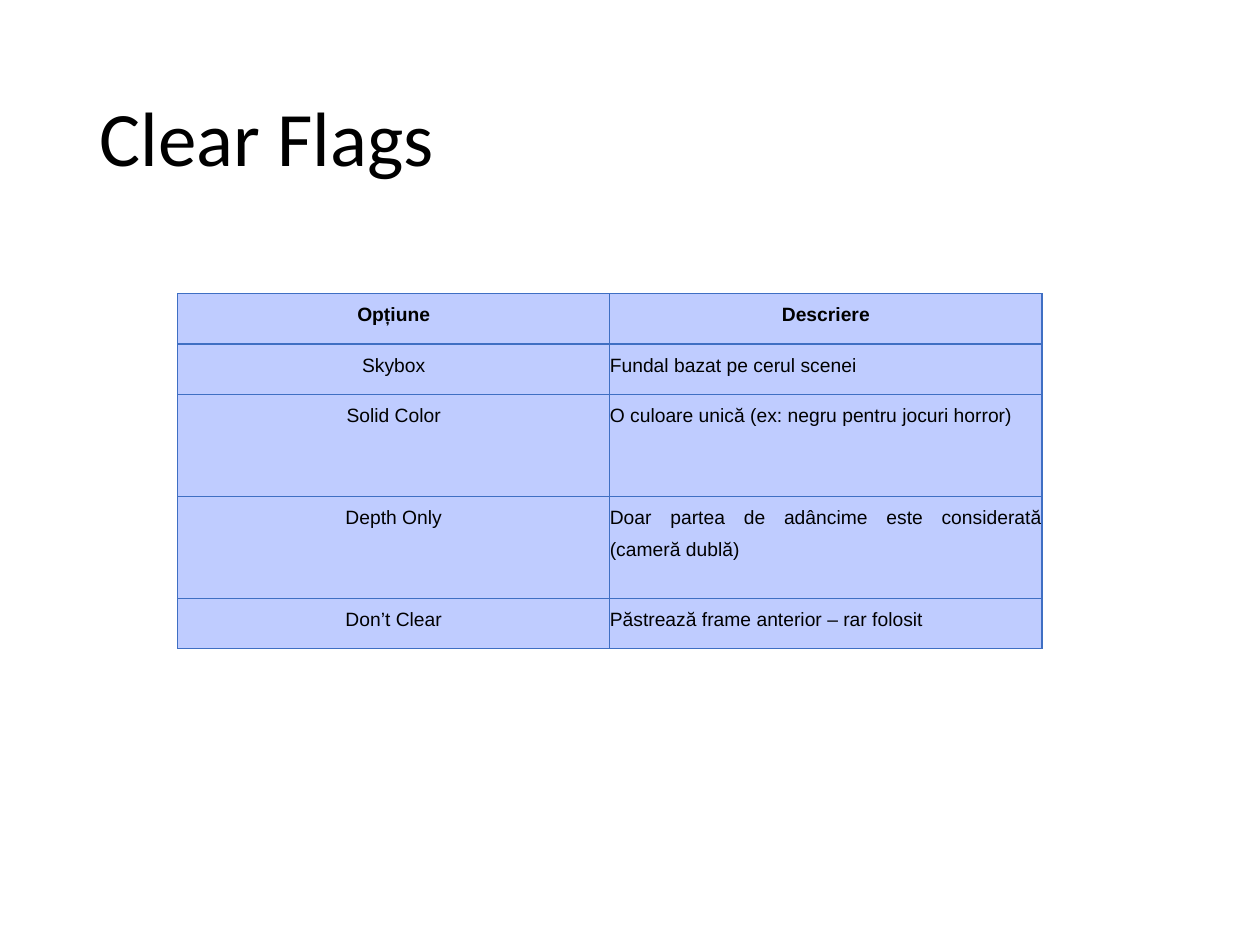
import dataclasses

import lxml.etree
import pptx
import pptx.dml.color
import pptx.enum.text
import pptx.oxml.ns
import pptx.util

Inches = pptx.util.Inches
Align = pptx.enum.text.PP_ALIGN
Anchor = pptx.enum.text.MSO_ANCHOR


@dataclasses.dataclass(frozen=True)
class Theme:
    ink: str = "000000"
    cell_fill: str = "BFCCFF"
    border: str = "3F6FC3"
    border_width: float = 0.75
    title_font: str = "Calibri"
    title_size: int = 44
    table_font: str = "Arial"
    table_size: int = 11


class SlideBuilder:
    def __init__(self, slide, theme):
        self.slide = slide
        self.theme = theme

    def format_paragraph(self, para, font, size, align, spacing, bold=False):
        para.alignment = align
        para.line_spacing = spacing
        for span in para.runs:
            span.font.name = font
            span.font.size = pptx.util.Pt(size)
            span.font.bold = bold
            span.font.color.rgb = pptx.dml.color.RGBColor.from_string(self.theme.ink)

    def add_title(self, text, left, top, width, height):
        title = self.slide.shapes.title
        title.left, title.top = Inches(left), Inches(top)
        title.width, title.height = Inches(width), Inches(height)
        frame = title.text_frame
        frame.text = text
        frame.vertical_anchor = Anchor.MIDDLE
        self.format_paragraph(frame.paragraphs[0], self.theme.title_font,
                              self.theme.title_size, Align.LEFT, 0.9)

    def add_table(self, rows, left, top, column_widths, row_heights):
        """Add a table whose first row is a bold, centred header."""
        table = self.slide.shapes.add_table(
            len(rows), len(column_widths), Inches(left), Inches(top),
            Inches(sum(column_widths)), Inches(sum(row_heights))).table
        for column, width in zip(table.columns, column_widths):
            column.width = Inches(width)
        for row, height in zip(table.rows, row_heights):
            row.height = Inches(height)
        for row_index, texts in enumerate(rows):
            header = row_index == 0
            for column_index, text in enumerate(texts):
                centred = header or column_index == 0
                self.fill_cell(table.cell(row_index, column_index), text,
                               Align.CENTER if centred else Align.JUSTIFY, header)

    def fill_cell(self, cell, text, align, bold):
        cell.margin_left = cell.margin_right = 0
        cell.margin_top = cell.margin_bottom = 0
        cell.vertical_anchor = Anchor.TOP
        self.add_borders(cell)
        cell.fill.solid()
        cell.fill.fore_color.rgb = pptx.dml.color.RGBColor.from_string(self.theme.cell_fill)
        cell.text_frame.text = text
        self.format_paragraph(cell.text_frame.paragraphs[0], self.theme.table_font,
                              self.theme.table_size, align, 1.5, bold)

    def add_borders(self, cell):
        """Draw all four cell borders; they must precede the fill in the XML."""
        qn = pptx.oxml.ns.qn
        properties = cell._tc.get_or_add_tcPr()
        width = str(pptx.util.Pt(self.theme.border_width))
        for side in ("a:lnL", "a:lnR", "a:lnT", "a:lnB"):
            line = lxml.etree.SubElement(properties, qn(side), w=width)
            fill = lxml.etree.SubElement(line, qn("a:solidFill"))
            lxml.etree.SubElement(fill, qn("a:srgbClr"), val=self.theme.border)


def main():
    deck = pptx.Presentation()
    deck.slide_width, deck.slide_height = Inches(10), Inches(7.5)
    title_only = deck.slide_layouts[5]
    page = SlideBuilder(deck.slides.add_slide(title_only), Theme())

    page.add_title("Clear Flags", 0.69, 0.4, 8.62, 1.45)
    clear_flags = [
        ("Opțiune", "Descriere"),
        ("Skybox", "Fundal bazat pe cerul scenei"),
        ("Solid Color", "O culoare unică (ex: negru pentru jocuri horror)"),
        ("Depth Only", "Doar partea de adâncime este considerată (cameră dublă)"),
        ("Don’t Clear", "Păstrează frame anterior – rar folosit"),
    ]
    single, double = 0.4, 0.81
    page.add_table(clear_flags, 1.41, 2.33, [3.43, 3.43],
                   [single, single, double, double, single])
    deck.save("out.pptx")


if __name__ == "__main__":
    main()
